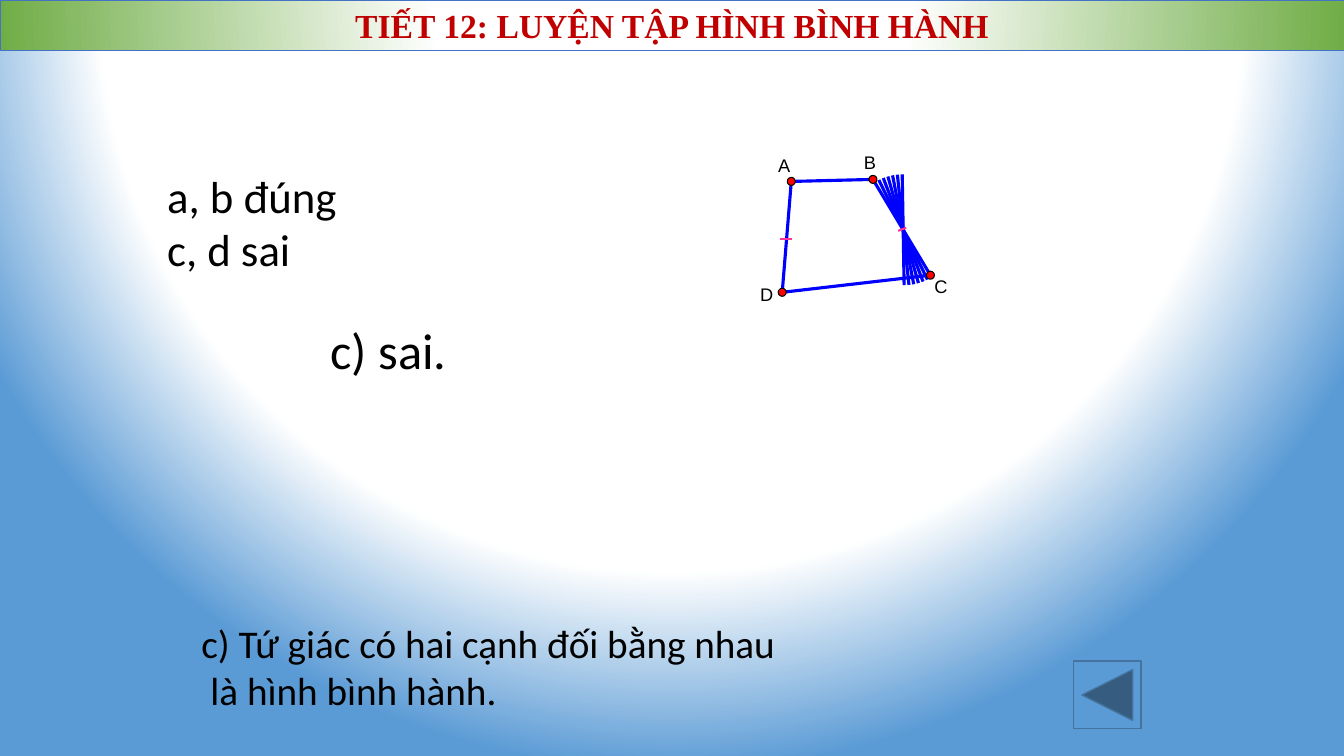
"""Builds the parallelogram practice slide with its answers and quadrilateral figure."""
import math

import lxml.etree
import pptx
import pptx.dml.color
import pptx.enum.shapes
import pptx.enum.text
import pptx.oxml.ns
import pptx.util

COLORS = {
    "white": "FFFFFF", "black": "000000", "sky": "5B9BD5", "green": "70AD47",
    "title": "C00000", "title line": "4472C4", "side": "0000FF",
    "mark": "FF3399", "vertex": "FF0000", "button line": "43739E",
}
RGB = {name: pptx.dml.color.RGBColor.from_string(value) for name, value in COLORS.items()}
CELL = pptx.util.Inches(0.1)
COLUMNS, ROWS = 133.33, 75
qn = pptx.oxml.ns.qn


def cells(*counts):
    """Turn counts of grid cells into lengths."""
    return [pptx.util.Emu(round(count * CELL)) for count in counts]


def radial_fill(fill, holder, white_until, edge_color):
    """Fill with a circular gradient that is white up to a stop."""
    fill.solid()
    solid = holder.find(".//" + qn("a:solidFill"))
    gradient = lxml.etree.Element(qn("a:gradFill"), rotWithShape="1")
    stops = lxml.etree.SubElement(gradient, qn("a:gsLst"))
    for position, color in ((0, "white"), (white_until, "white"), (100, edge_color)):
        stop = lxml.etree.SubElement(stops, qn("a:gs"), pos=str(position * 1000))
        lxml.etree.SubElement(stop, qn("a:srgbClr"), val=COLORS[color])
    circle = lxml.etree.SubElement(gradient, qn("a:path"))
    circle.set("path", "circle")
    lxml.etree.SubElement(circle, qn("a:fillToRect"), l="50000", t="-80000", r="50000", b="180000")
    solid.getparent().replace(solid, gradient)


presentation = pptx.Presentation()
presentation.slide_width, presentation.slide_height = cells(COLUMNS, ROWS)
slide = presentation.slides.add_slide(presentation.slide_layouts.get_by_name("Title Only"))
radial_fill(slide.background.fill, slide.background._cSld, 74, "sky")

title = slide.shapes.title
title.left, title.top, title.width, title.height = cells(0, 0, COLUMNS, 5)
radial_fill(title.fill, title._element.spPr, 35, "green")
title.line.color.rgb = RGB["title line"]
title.line.width = pptx.util.Pt(0.5)
title.text_frame.auto_size = pptx.enum.text.MSO_AUTO_SIZE.NONE
title.text_frame.vertical_anchor = pptx.enum.text.MSO_ANCHOR.MIDDLE
paragraph = title.text_frame.paragraphs[0]
paragraph.alignment = pptx.enum.text.PP_ALIGN.CENTER
paragraph.line_spacing = 1.0
run = paragraph.add_run()
run.text = "TIẾT 12: LUYỆN TẬP HÌNH BÌNH HÀNH"
run.font.name = "Times New Roman"
run.font.size = pptx.util.Pt(24)
run.font.bold = True
run.font.color.rgb = RGB["title"]

vertices = {"A": (78.5, 18), "B": (86.6, 17.8), "C": (92.3, 27.3), "D": (77.6, 29)}
label_corners = {"A": (77.2, 15.3), "B": (85.7, 15), "C": (92.7, 27.3), "D": (75.4, 28.1)}
segments = [(vertices[start], vertices[end], "side", 2.25) for start, end in ("BC", "DC", "AB", "AD")]

pivot_x, pivot_y, radius = 89.6, 22.8, 5.5
for degrees in range(1, 31, 5):
    across = radius * math.sin(math.radians(degrees))
    down = radius * math.cos(math.radians(degrees))
    segments.append(((pivot_x - across, pivot_y - down), (pivot_x + across, pivot_y + down), "side", 2.25))

segments += [((77.4, 23.7), (78.6, 23.7), "mark", 1.5), ((89.1, 22.9), (89.9, 22.6), "mark", 1.5)]
for start, end, color, width in segments:
    segment = slide.shapes.add_connector(pptx.enum.shapes.MSO_CONNECTOR.STRAIGHT, *cells(*start, *end))
    segment.line.color.rgb = RGB[color]
    segment.line.width = pptx.util.Pt(width)
    lxml.etree.SubElement(segment._element.spPr, qn("a:effectLst"))

dot_size = 0.8
shapes = [
    (pptx.enum.shapes.MSO_SHAPE.OVAL, (x - dot_size / 2, y - dot_size / 2, dot_size, dot_size), "vertex", "black", 0)
    for x, y in vertices.values()
]
shapes.append((pptx.enum.shapes.MSO_SHAPE.ACTION_BUTTON_BACK_OR_PREVIOUS,
               (106.5, 65.6, 6.7, 6.7), "sky", "button line", 1))
for kind, place, fill_color, line_color, line_width in shapes:
    shape = slide.shapes.add_shape(kind, *cells(*place))
    shape.shadow.inherit = False
    shape.fill.solid()
    shape.fill.fore_color.rgb = RGB[fill_color]
    shape.line.color.rgb = RGB[line_color]
    shape.line.width = pptx.util.Pt(line_width)

left, center = pptx.enum.text.PP_ALIGN.LEFT, pptx.enum.text.PP_ALIGN.CENTER
texts = [((*corner, 1.3, 2.2), [(name, 0)], "Arial", 13, left, 0) for name, corner in label_corners.items()]
texts += [
    ((15.6, 16.2, 30.5, 11.8), [("a, b đúng", 0), ("c, d sai", 0)], "Calibri", 32, left, 1),
    ((19, 60.9, 59.7, 10.4), [("c) Tứ giác có hai cạnh đối bằng nhau", 0), ("là hình bình hành.", 0.9)],
     "Calibri", 28, left, 1),
    ((24.5, 31.2, 28.1, 7.1), [("c) sai.", 0)], "Calibri", 36, center, 1),
]
for place, lines, font_name, size, alignment, inset in texts:
    box = slide.shapes.add_textbox(*cells(*place))
    frame = box.text_frame
    frame.word_wrap = inset > 0
    frame.margin_left, frame.margin_right, frame.margin_top, frame.margin_bottom = cells(
        inset, inset, inset / 2, inset / 2)
    for number, (line, indent) in enumerate(lines):
        paragraph = frame.add_paragraph() if number else frame.paragraphs[0]
        paragraph.alignment = alignment
        if indent:
            paragraph._p.get_or_add_pPr().set("marL", str(cells(indent)[0]))
        run = paragraph.add_run()
        run.text = line
        run.font.name = font_name
        run.font.size = pptx.util.Pt(size)
        run.font.color.rgb = RGB["black"]

presentation.save("out.pptx")
